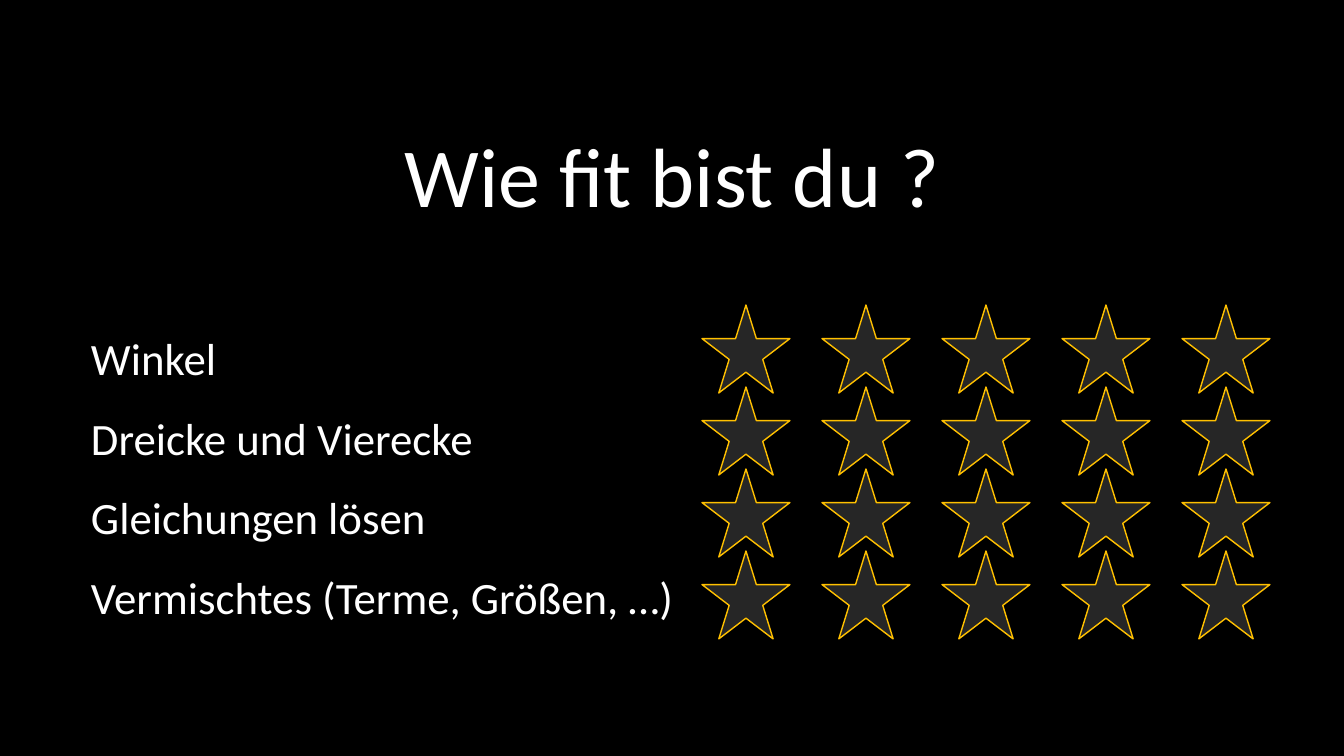
"""Build a self-rating slide with four topics and five stars each."""
from pptx import Presentation
from pptx.dml.color import RGBColor
from pptx.enum.shapes import MSO_SHAPE
from pptx.enum.text import MSO_ANCHOR, PP_ALIGN
from pptx.util import Emu, Pt

BLACK = RGBColor(0x00, 0x00, 0x00)
WHITE = RGBColor(0xFF, 0xFF, 0xFF)
GREY = RGBColor(0x26, 0x26, 0x26)
GOLD = RGBColor(0xFF, 0xC0, 0x00)
SCALE = 12192000 / 1344


def px(count):
    return Emu(round(count * SCALE))


def write(frame, text, size=32, align=PP_ALIGN.LEFT, anchor=MSO_ANCHOR.TOP, gap=0):
    frame.word_wrap = True
    frame.vertical_anchor = anchor
    frame.margin_left = frame.margin_right = px(10)
    frame.margin_top = frame.margin_bottom = 0
    frame.text = text
    for rank, para in enumerate(frame.paragraphs):
        para.alignment = align
        para.space_before = Pt(gap if rank else 0)
        para.font.name = "Calibri"
        para.font.size = Pt(size)
        para.font.color.rgb = WHITE


deck = Presentation()
deck.slide_width, deck.slide_height = px(1344), px(756)
slide = deck.slides.add_slide(deck.slide_layouts[5])
slide.background.fill.solid()
slide.background.fill.fore_color.rgb = BLACK

title = slide.shapes.title
title.left, title.top, title.width, title.height = px(81), px(113), px(1182), px(122)
write(title.text_frame, "Wie fit bist du ?", size=60,
      align=PP_ALIGN.CENTER, anchor=MSO_ANCHOR.MIDDLE)

topics = ["Winkel", "Dreicke und Vierecke", "Gleichungen lösen",
          "Vermischtes (Terme, Größen, …)"]
box = slide.shapes.add_textbox(px(81), px(331), px(615), px(297))
write(box.text_frame, "\n".join(topics), gap=18.3)

for row in range(len(topics)):
    group = slide.shapes.add_group_shape()
    for col in range(5):
        star = group.shapes.add_shape(MSO_SHAPE.STAR_5_POINT, px(702 + 120 * col),
                                      px(305 + 82 * row), px(88), px(88))
        star.shadow.inherit = False
        star.fill.solid()
        star.fill.fore_color.rgb = GREY
        star.line.color.rgb = GOLD
        star.line.width = Pt(1)

deck.save("out.pptx")
